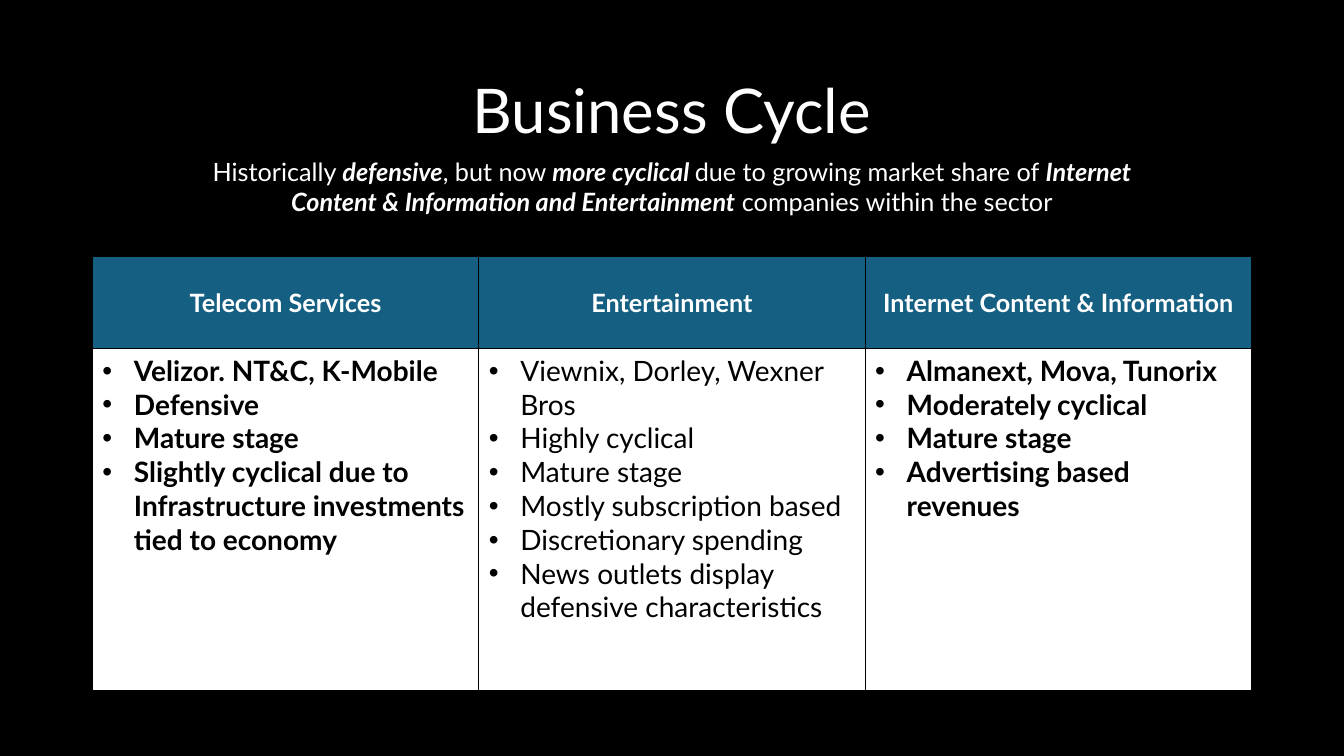
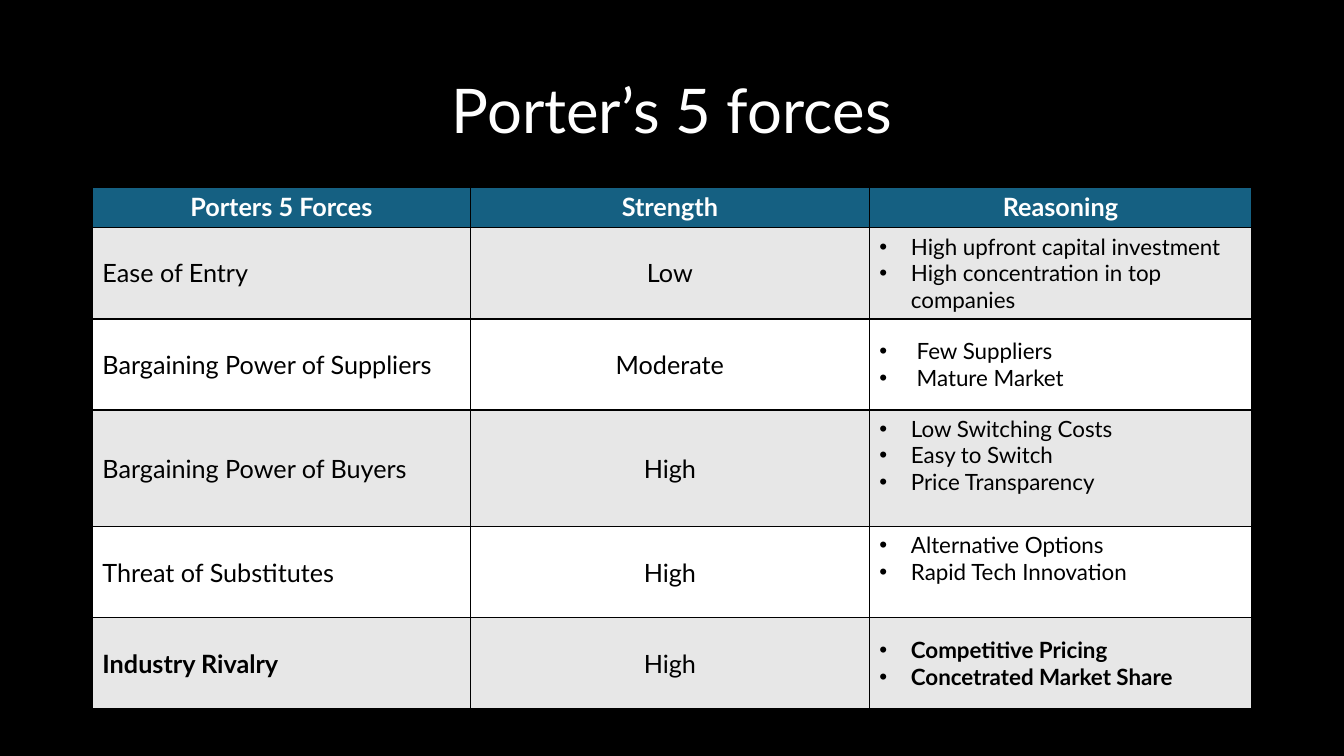
from lxml.etree import SubElement
from pptx import Presentation
from pptx.dml.color import RGBColor as RGB
from pptx.enum.text import MSO_ANCHOR as ANCHOR, PP_ALIGN as ALIGN
from pptx.oxml.ns import qn
from pptx.util import Pt

COLORS = {"black": "000000", "white": "FFFFFF", "header": "156082", "band": "E7E7E7"}
FORMATS = {
    "title": {"size": Pt(44), "color": "white"},
    "subtitle": {"size": Pt(18), "color": "white"},
    "header": {"size": Pt(18), "color": "white", "bold": True},
    "label": {"size": Pt(18), "color": "black"},
    "points": {"size": Pt(20), "color": "black"},
    "reasons": {"size": Pt(16), "color": "black"},
}
LEFT, WIDTH = 66, 828
INDENT = Pt(22.5)


def write(frame, lines, style, align=ALIGN.LEFT, bold=False, bulleted=False):
    frame.word_wrap = True
    for number, line in enumerate(lines):
        paragraph = frame.paragraphs[0] if number == 0 else frame.add_paragraph()
        paragraph.alignment = align
        if style == "title":
            paragraph.line_spacing = 0.9
        if bulleted:
            properties = paragraph._p.get_or_add_pPr()
            properties.set("marL", str(INDENT))
            properties.set("indent", str(-INDENT))
            SubElement(properties, qn("a:buFont"), typeface="Arial")
            SubElement(properties, qn("a:buChar"), char="•")
        for part, words in enumerate(line.split("*")):
            if not words:
                continue
            run = paragraph.add_run()
            run.text = words
            emphasis = part % 2 == 1
            values = {"name": "Lato", "bold": bold or emphasis, "italic": emphasis, **FORMATS[style]}
            for name, value in values.items():
                if name == "color":
                    run.font.color.rgb = RGB.from_string(COLORS[value])
                else:
                    setattr(run.font, name, value)


def paint(cell, color):
    properties = cell._tc.get_or_add_tcPr()
    for side in ("lnL", "lnR", "lnT", "lnB"):
        border = SubElement(properties, qn(f"a:{side}"), w=str(Pt(1)))
        border_fill = SubElement(border, qn("a:solidFill"))
        SubElement(border_fill, qn("a:srgbClr"), val=COLORS["black"])
    cell.fill.solid()
    cell.fill.fore_color.rgb = RGB.from_string(COLORS[color])


sectors = [
    ["Telecom Services", "Entertainment", "Internet Content & Information"],
    [
        ["Velizor. NT&C, K-Mobile", "Defensive", "Mature stage",
         "Slightly cyclical due to Infrastructure investments tied to economy"],
        ["Viewnix, Dorley, Wexner Bros", "Highly cyclical", "Mature stage",
         "Mostly subscription based", "Discretionary spending",
         "News outlets display defensive characteristics"],
        ["Almanext, Mova, Tunorix", "Moderately cyclical", "Mature stage",
         "Advertising based revenues"],
    ],
]
forces = [
    ["Porters 5 Forces", "Strength", "Reasoning"],
    ["Ease of Entry", "Low",
     ["High upfront capital investment", "High concentration in top companies"]],
    ["Bargaining Power of Suppliers", "Moderate", [" Few Suppliers", " Mature Market"]],
    ["Bargaining Power of Buyers", "High",
     ["Low Switching Costs", "Easy to Switch", "Price Transparency"]],
    ["Threat of Substitutes", "High", ["Alternative Options", "Rapid Tech Innovation"]],
    ["Industry Rivalry", "High", ["Competitive Pricing", "Concetrated Market Share"]],
]
pages = [
    {"title": "Business Cycle",
     "subtitle": "Historically *defensive*, but now *more cyclical *due to growing market share of "
                 "*Internet Content & Information and Entertainment* companies within the sector",
     "rows": sectors, "top": 183, "widths": [276, 276, 276], "heights": [66, 244],
     "bullets": "points", "fills": ["white"], "top_rows": [1]},
    {"title": "Porter’s 5 forces", "subtitle": None,
     "rows": forces, "top": 133.5, "widths": [270, 285, 273],
     "heights": [28, 65.5, 65, 83.5, 65, 65],
     "bullets": "reasons", "fills": ["band", "white"], "top_rows": [3, 4]},
]

deck = Presentation()
deck.slide_width, deck.slide_height = Pt(960), Pt(540)

for page in pages:
    slide = deck.slides.add_slide(deck.slide_layouts[6])
    slide.background.fill.solid()
    slide.background.fill.fore_color.rgb = RGB.from_string(COLORS["black"])

    title = slide.shapes.add_textbox(Pt(LEFT), Pt(28.8), Pt(WIDTH), Pt(104.4)).text_frame
    title.vertical_anchor = ANCHOR.MIDDLE
    write(title, [page["title"]], "title", ALIGN.CENTER)
    if page["subtitle"]:
        subtitle = slide.shapes.add_textbox(Pt(125.5), Pt(108), Pt(709), Pt(51)).text_frame
        write(subtitle, [page["subtitle"]], "subtitle", ALIGN.CENTER)

    rows, heights = page["rows"], page["heights"]
    grid = slide.shapes.add_table(
        len(rows), 3, Pt(LEFT), Pt(page["top"]), Pt(WIDTH), Pt(sum(heights))).table
    for column, width in zip(grid.columns, page["widths"]):
        column.width = Pt(width)
    for r, (row, height) in enumerate(zip(rows, heights)):
        grid.rows[r].height = Pt(height)
        for c, content in enumerate(row):
            cell = grid.cell(r, c)
            bulleted = isinstance(content, list)
            paint(cell, page["fills"][(r - 1) % len(page["fills"])] if r else "header")
            at_top = bulleted and r in page["top_rows"]
            cell.vertical_anchor = ANCHOR.TOP if at_top else ANCHOR.MIDDLE
            if r == 0:
                write(cell.text_frame, [content], "header", ALIGN.CENTER, bold=True)
                continue
            bold = r == len(rows) - 1 and c != 1
            if bulleted:
                write(cell.text_frame, content, page["bullets"], bold=bold, bulleted=True)
            else:
                align = ALIGN.CENTER if c == 1 else ALIGN.LEFT
                write(cell.text_frame, [content], "label", align, bold)

deck.save("out.pptx")
